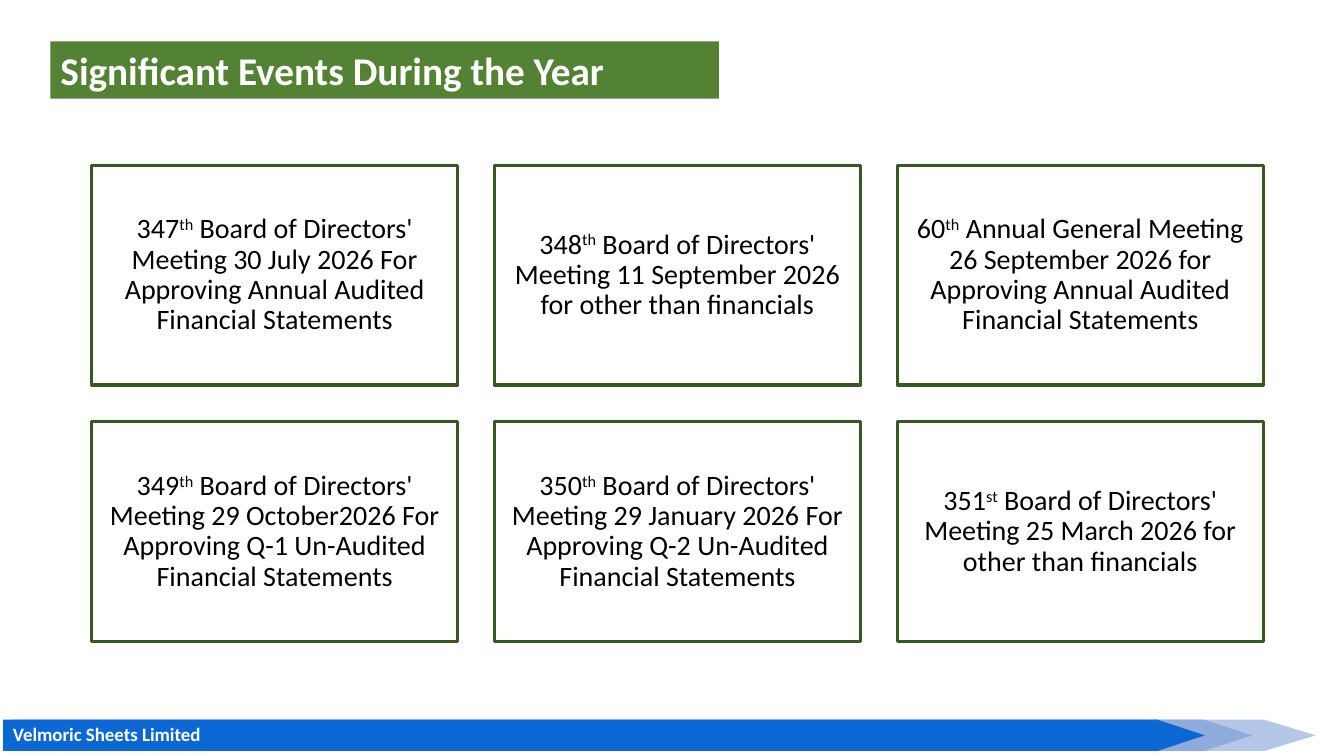
"""Build the slide listing the significant board and general meetings of the year."""
from dataclasses import dataclass

from pptx import Presentation
from pptx.dml.color import RGBColor
from pptx.enum.shapes import MSO_SHAPE as Shape
from pptx.enum.text import MSO_ANCHOR as Anchor, MSO_AUTO_SIZE as AutoSize, PP_ALIGN as Align
from pptx.util import Inches, Pt


@dataclass(frozen=True)
class Theme:
    font: str = "Calibri"
    white: RGBColor = RGBColor.from_string("FFFFFF")
    black: RGBColor = RGBColor.from_string("000000")
    banner: RGBColor = RGBColor.from_string("548235")
    border: RGBColor = RGBColor.from_string("385723")
    pale: RGBColor = RGBColor.from_string("B4C7E7")
    mid: RGBColor = RGBColor.from_string("8FAADC")
    strong: RGBColor = RGBColor.from_string("0A67D4")
    title_size: Pt = Pt(28)
    event_size: Pt = Pt(20)
    footer_size: Pt = Pt(13.5)


theme = Theme()


def style(paragraph, size, color, bold=False, align=Align.LEFT):
    paragraph.alignment = align
    font = paragraph.font
    font.name, font.size, font.bold = theme.font, size, bold
    font.color.rgb = color


def add_box(kind, left, top, width, height, fill):
    box = slide.shapes.add_shape(kind, Inches(left), Inches(top), Inches(width), Inches(height))
    box.shadow.inherit = False
    box.fill.solid()
    box.fill.fore_color.rgb = fill
    box.line.fill.background()
    return box


deck = Presentation()
deck.slide_width, deck.slide_height = Inches(13.33), Inches(7.5)
slide = deck.slides.add_slide(deck.slide_layouts[5])

ribbon_height = 0.31
ribbons = [
    (0.11, 12.94, 0.51, theme.pale),
    (0.15, 12.27, 0.48, theme.mid),
    (0.03, 11.92, 0.47, theme.strong),
]
for left, width, tip, color in ribbons:
    ribbon = add_box(Shape.PENTAGON, left, 7.14, width, ribbon_height, color)
    ribbon.adjustments[0] = tip / ribbon_height

company = slide.shapes.add_textbox(Inches(0.03), Inches(7.12), Inches(4.74), Inches(0.33)).text_frame
company.word_wrap = True
company.text = "Velmoric Sheets Limited"
style(company.paragraphs[0], theme.footer_size, theme.white, bold=True)

heading = slide.shapes.title
heading.left, heading.top = Inches(0.5), Inches(0.41)
heading.width, heading.height = Inches(6.63), Inches(0.57)
heading.fill.solid()
heading.fill.fore_color.rgb = theme.banner
heading.text_frame.text = "Significant Events During the Year"
heading.text_frame.auto_size = AutoSize.NONE
heading.text_frame.vertical_anchor = Anchor.TOP
style(heading.text_frame.paragraphs[0], theme.title_size, theme.white, bold=True)

events = [
    ("347", "th", "Board of Directors' Meeting 30 July 2026 For Approving Annual Audited Financial Statements"),
    ("348", "th", "Board of Directors' Meeting 11 September 2026 for other than financials"),
    ("60", "th", "Annual General Meeting 26 September 2026 for Approving Annual Audited Financial Statements"),
    ("349", "th", "Board of Directors' Meeting 29 October2026 For Approving Q-1 Un-Audited Financial Statements"),
    ("350", "th", "Board of Directors' Meeting 29 January 2026 For Approving Q-2 Un-Audited Financial Statements"),
    ("351", "st", "Board of Directors' Meeting 25 March 2026 for other than financials"),
]
columns = 3
card_width, card_height, gap = 3.63, 2.18, 0.365
for index, (number, suffix, description) in enumerate(events):
    row, column = divmod(index, columns)
    card = add_box(
        Shape.RECTANGLE,
        0.91 + column * (card_width + gap),
        1.64 + row * (card_height + gap),
        card_width,
        card_height,
        theme.white,
    )
    card.line.color.rgb = theme.border
    card.line.width = Pt(2.25)
    frame = card.text_frame
    frame.word_wrap = True
    frame.vertical_anchor = Anchor.MIDDLE
    frame.margin_left = frame.margin_right = frame.margin_top = frame.margin_bottom = Inches(0.08)
    event = frame.paragraphs[0]
    event.line_spacing = 0.9
    event.add_run().text = number
    ordinal = event.add_run()
    ordinal.text = suffix
    ordinal._r.get_or_add_rPr().set("baseline", "30000")
    event.add_run().text = f" {description}"
    style(event, theme.event_size, theme.black, align=Align.CENTER)

deck.save("out.pptx")
